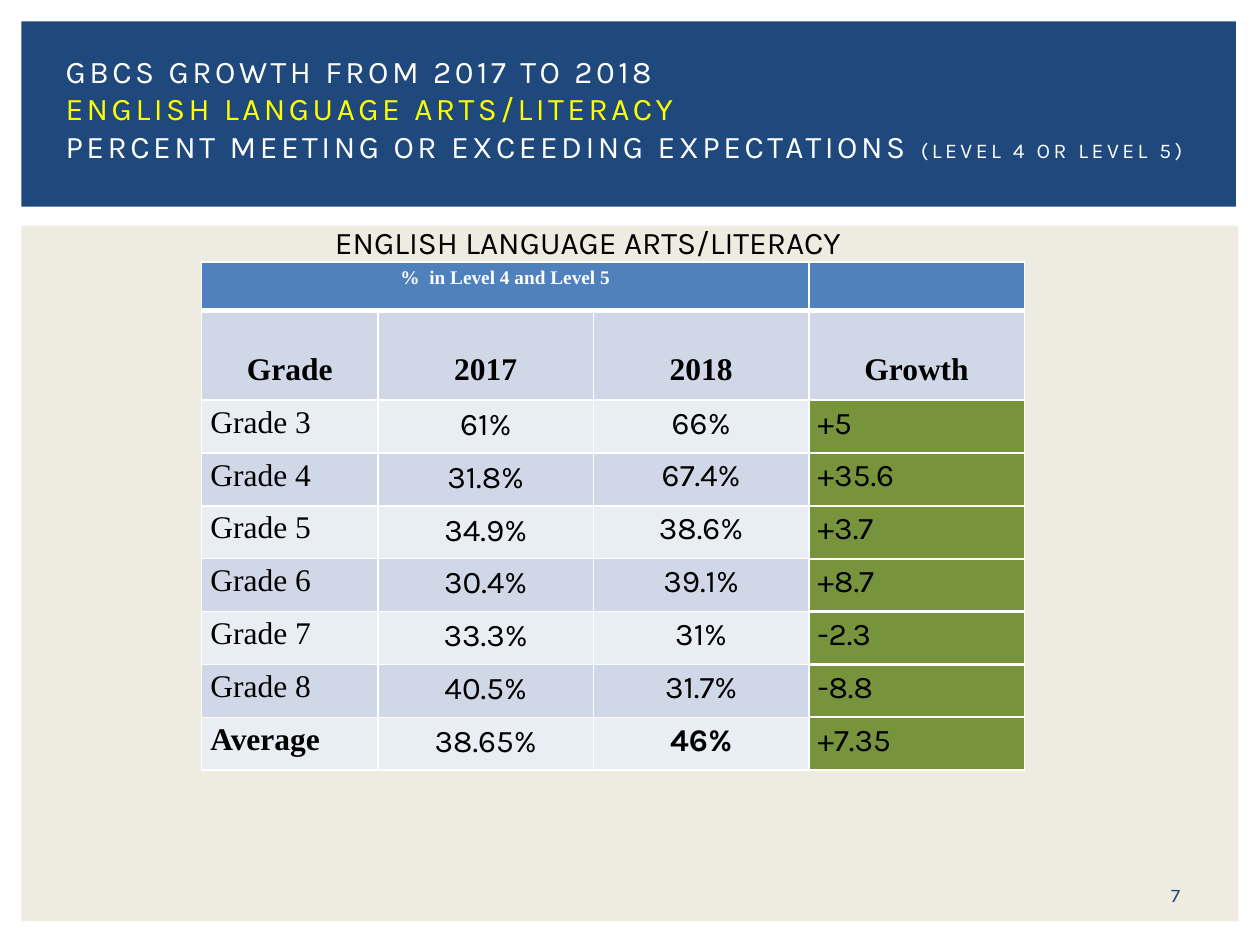
"""Build the English language arts growth slide."""
from lxml import etree
from pptx import Presentation
from pptx import util as u
from pptx.dml.color import RGBColor
from pptx.enum import shapes, text
from pptx.oxml import ns

SERIF, SANS = "Times New Roman", "Karla"
WHITE, BLACK, NAVY, YELLOW = "FFFFFF", "000000", "1F497D", "FFFF00"
BLUE, GREEN, BANDS = "4F81BD", "77933C", ("E9EDF4", "D0D8E8")
LEFT, CENTER = text.PP_ALIGN.LEFT, text.PP_ALIGN.CENTER
TOP, MIDDLE, BOTTOM = (
    text.MSO_ANCHOR.TOP, text.MSO_ANCHOR.MIDDLE, text.MSO_ANCHOR.BOTTOM)

PANELS = [((0.17, 1.79, 9.66, 5.52), "EEECE1"), ((0.17, 0.17, 9.64, 1.47), NAVY)]
TITLE = [
    ("GBCS GROWTH FROM 2017 TO 2018", {}),
    ("\n", {}),
    ("ENGLISH LANGUAGE ARTS/LITERACY", {"color": YELLOW}),
    ("\n", {}),
    ("PERCENT MEETING OR EXCEEDING EXPECTATIONS ", {}),
    ("(LEVEL 4 OR LEVEL 5)", {"size": 12}),
]
SUBJECT = "ENGLISH LANGUAGE ARTS/LITERACY"
BANNER = "%  in Level 4 and Level 5"
HEADINGS = ["Grade", "2017", "2018", "Growth"]
RESULTS = [
    ("Grade 3", "61%", "66%", "+5"),
    ("Grade 4", "31.8%", "67.4%", "+35.6"),
    ("Grade 5", "34.9%", "38.6%", "+3.7"),
    ("Grade 6", "30.4%", "39.1%", "+8.7"),
    ("Grade 7", "33.3%", "31%", "-2.3"),
    ("Grade 8", "40.5%", "31.7%", "-8.8"),
    ("Average", "38.65%", "46%", "+7.35"),
]
BOLD_RESULTS = {"Average", "46%"}
COLUMN_WIDTHS = [1.4, 1.71, 1.71, 1.71]
ROW_HEIGHTS = [0.37, 0.71] + [0.42] * len(RESULTS)


def rgb(value):
    return RGBColor.from_string(value)


def add_text(para, words, size=18, font=SANS, color=BLACK, bold=False,
             align=LEFT, spacing=0):
    para.alignment = align
    if words == "\n":
        para.add_line_break()
        return
    span = para.add_run()
    span.text = words
    span.font.size = u.Pt(size)
    span.font.name = font
    span.font.bold = bold
    span.font.color.rgb = rgb(color)
    if spacing:
        span.font._element.set("spc", str(spacing * 100))


def set_frame(frame, anchor, insets=(0.1, 0.05, 0.1, 0.05), wrap=True):
    frame.word_wrap = wrap
    frame.auto_size = text.MSO_AUTO_SIZE.NONE
    frame.vertical_anchor = anchor
    (frame.margin_left, frame.margin_top,
     frame.margin_right, frame.margin_bottom) = map(u.Inches, insets)


def add_panel(slide, place, color):
    panel = slide.shapes.add_shape(
        shapes.MSO_SHAPE.RECTANGLE, *map(u.Inches, place))
    panel.shadow.inherit = False
    panel.fill.solid()
    panel.fill.fore_color.rgb = rgb(color)
    panel.line.fill.background()


def add_title(slide):
    title = slide.shapes.title
    title.left, title.top, title.width, title.height = map(
        u.Inches, (0.42, 0.39, 9.17, 1.15))
    set_frame(title.text_frame, TOP, (0.1, 0.02, 0.1, 0))
    for words, look in TITLE:
        add_text(title.text_frame.paragraphs[0], words,
                 **{"color": WHITE, "spacing": 2, **look})
    slide.shapes._spTree.append(title._element)


def add_label(slide, place, words, anchor=TOP, **look):
    box = slide.shapes.add_textbox(*map(u.Inches, place))
    set_frame(box.text_frame, anchor)
    add_text(box.text_frame.paragraphs[0], words, **look)


def style_cell(cell, fill, top=1, bottom=1, anchor=TOP,
               insets=(0.07, 0.04, 0.07, 0.04)):
    cell.vertical_anchor = anchor
    (cell.margin_left, cell.margin_top,
     cell.margin_right, cell.margin_bottom) = map(u.Inches, insets)
    properties = cell._tc.get_or_add_tcPr()
    for tag, width in (("lnL", 1), ("lnR", 1), ("lnT", top), ("lnB", bottom)):
        line = etree.SubElement(
            properties, ns.qn(f"a:{tag}"), w=str(int(u.Pt(width))))
        solid = etree.SubElement(line, ns.qn("a:solidFill"))
        etree.SubElement(solid, ns.qn("a:srgbClr"), val=WHITE)
    cell.fill.solid()
    cell.fill.fore_color.rgb = rgb(fill)


def add_results(slide):
    table = slide.shapes.add_table(
        len(ROW_HEIGHTS), len(COLUMN_WIDTHS), u.Inches(1.6), u.Inches(2.08),
        u.Inches(sum(COLUMN_WIDTHS)), u.Inches(sum(ROW_HEIGHTS))).table
    for column, width in zip(table.columns, COLUMN_WIDTHS):
        column.width = u.Inches(width)
    for row, height in zip(table.rows, ROW_HEIGHTS):
        row.height = u.Inches(height)

    for index, heading in enumerate(HEADINGS):
        style_cell(table.cell(0, index), BLUE, bottom=3)
        cell = table.cell(1, index)
        style_cell(cell, BANDS[1], top=3, anchor=BOTTOM,
                   insets=(0.07, 0.04, 0.07, 0.1))
        add_text(cell.text_frame.paragraphs[0], heading,
                 font=SERIF, bold=True, align=CENTER)
    table.cell(0, 0).merge(table.cell(0, 2))
    add_text(table.cell(0, 0).text_frame.paragraphs[0], BANNER, size=11,
             font=SERIF, color=WHITE, bold=True, align=CENTER)

    for number, result in enumerate(RESULTS):
        for index, words in enumerate(result):
            cell = table.cell(number + 2, index)
            if index == 3:
                style_cell(cell, GREEN, top=1.5, bottom=1.5)
            elif index == 1:
                style_cell(cell, BANDS[number % 2], insets=(0.1, 0.05, 0.1, 0.05))
            else:
                style_cell(cell, BANDS[number % 2])
            add_text(cell.text_frame.paragraphs[0], words,
                     font=SANS if index else SERIF,
                     bold=words in BOLD_RESULTS,
                     align=CENTER if index in (1, 2) else LEFT)


def main():
    deck = Presentation()
    deck.slide_width, deck.slide_height = u.Inches(10), u.Inches(7.5)
    slide = deck.slides.add_slide(deck.slide_layouts[5])
    for place, color in PANELS:
        add_panel(slide, place, color)
    add_results(slide)
    add_title(slide)
    add_label(slide, (9.01, 6.95, 0.64, 0.3), "7", anchor=MIDDLE,
              size=11, color=NAVY, align=CENTER)
    add_label(slide, (2.56, 1.72, 4.45, 0.4), SUBJECT)
    deck.save("out.pptx")


if __name__ == "__main__":
    main()
